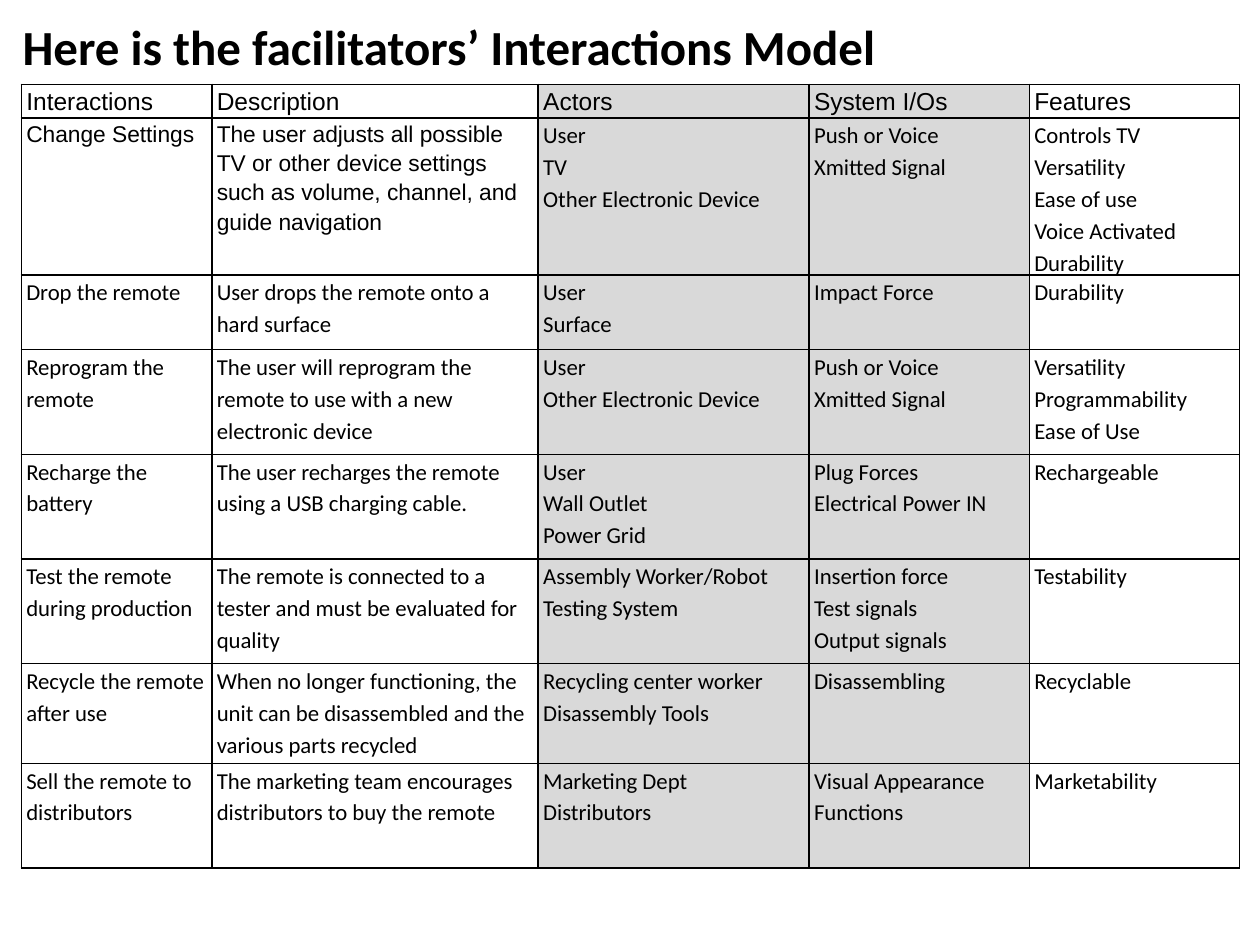
from dataclasses import dataclass

from lxml.etree import SubElement
from pptx import Presentation
from pptx.dml.color import RGBColor
from pptx.enum.text import MSO_ANCHOR, MSO_AUTO_SIZE, PP_ALIGN
from pptx.oxml.ns import qn
from pptx.util import Cm, Pt

BLACK = "000000"
GREY = "D9D9D9"
WIDTHS = [3.84, 6.58, 5.46, 4.44, 4.24]
SHADED = (2, 3)


@dataclass
class Row:
    height: float
    cells: list[str]
    size: float = 13
    plain: int = 0


ROWS = [
    Row(0.64, ["Interactions", "Description", "Actors", "System I/Os", "Features"], 14, 5),
    Row(3.15, [
        "Change Settings",
        "The user adjusts all possible TV or other device settings such as volume, channel, and guide navigation",
        "User\nTV\nOther Electronic Device",
        "Push or Voice\nXmitted Signal",
        "Controls TV\nVersatility\nEase of use\nVoice Activated\nDurability",
    ], plain=2),
    Row(1.5, [
        "Drop the remote",
        "User drops the remote onto a hard surface",
        "User\nSurface",
        "Impact Force",
        "Durability",
    ]),
    Row(2.11, [
        "Reprogram the remote",
        "The user will reprogram the remote to use with a new electronic device",
        "User\nOther Electronic Device",
        "Push or Voice\nXmitted Signal",
        "Versatility\nProgrammability\nEase of Use",
    ]),
    Row(2.11, [
        "Recharge the battery",
        "The user recharges the remote using a USB charging cable.",
        "User\nWall Outlet\nPower Grid",
        "Plug Forces\nElectrical Power IN",
        "Rechargeable",
    ]),
    Row(2.11, [
        "Test the remote during production",
        "The remote is connected to a tester and must be evaluated for quality",
        "Assembly Worker/Robot\nTesting System",
        "Insertion force\nTest signals\nOutput signals",
        "Testability",
    ]),
    Row(2.01, [
        "Recycle the remote after use",
        "When no longer functioning, the unit can be disassembled and the various parts recycled",
        "Recycling center worker\nDisassembly Tools",
        "Disassembling",
        "Recyclable",
    ]),
    Row(2.11, [
        "Sell the remote to distributors",
        "The marketing team encourages distributors to buy the remote",
        "Marketing Dept\nDistributors",
        "Visual Appearance\nFunctions",
        "Marketability",
    ]),
]


def paint(target, shade: str) -> None:
    target.rgb = RGBColor.from_string(shade)


def write(frame, text: str, *, size: float, font: str = "Calibri", bold: bool = False,
          shade: str = BLACK, leading: float = 1.0, after: float = 0) -> None:
    frame.text = text
    for para in frame.paragraphs:
        para.alignment = PP_ALIGN.LEFT
        para.line_spacing = leading
        para.space_before = Pt(0)
        para.space_after = Pt(after)
        for run in para.runs:
            run.font.size = Pt(size)
            run.font.name = font
            run.font.bold = bold
            paint(run.font.color, shade)


def border(cell, shade: str = BLACK, width: float = 1) -> None:
    props = cell._tc.get_or_add_tcPr()
    for side in ("lnL", "lnR", "lnT", "lnB"):
        line = SubElement(props, qn(f"a:{side}"), w=str(Pt(width)))
        fill = SubElement(line, qn("a:solidFill"))
        SubElement(fill, qn("a:srgbClr"), val=shade)


def fill_cell(cell, row: Row, col: int) -> None:
    cell.margin_left = cell.margin_right = Cm(0.1)
    cell.margin_top = cell.margin_bottom = Cm(0)
    cell.vertical_anchor = MSO_ANCHOR.TOP
    border(cell)
    if col in SHADED:
        cell.fill.solid()
        paint(cell.fill.fore_color, GREY)
    else:
        cell.fill.background()
    write(cell.text_frame, row.cells[col], size=row.size, leading=1.15,
          font="Arial" if col < row.plain else "Calibri",
          after=6 if col < 2 or row.plain == len(WIDTHS) else 0)


def add_title(slide, text: str) -> None:
    title = slide.shapes.title
    title.left, title.top, title.width, title.height = Cm(0.2), Cm(0.2), Cm(24.94), Cm(1.45)
    frame = title.text_frame
    frame.word_wrap = True
    frame.auto_size = MSO_AUTO_SIZE.SHAPE_TO_FIT_TEXT
    frame.vertical_anchor = MSO_ANCHOR.MIDDLE
    write(frame, text, size=28, bold=True)


def add_grid(slide, rows: list[Row]) -> None:
    frame = slide.shapes.add_table(len(rows), len(WIDTHS), Cm(0.43), Cm(1.7),
                                   Cm(sum(WIDTHS)), Cm(sum(row.height for row in rows)))
    table = frame.table
    table.first_row = table.horz_banding = False
    for col, width in zip(table.columns, WIDTHS):
        col.width = Cm(width)
    for index, row in enumerate(rows):
        table.rows[index].height = Cm(row.height)
        for col in range(len(WIDTHS)):
            fill_cell(table.cell(index, col), row, col)


def main() -> None:
    deck = Presentation()
    deck.slide_width, deck.slide_height = Cm(25.4), Cm(19.05)
    slide = deck.slides.add_slide(deck.slide_layouts[5])
    add_title(slide, "Here is the facilitators’ Interactions Model")
    add_grid(slide, ROWS)
    deck.save("out.pptx")


if __name__ == "__main__":
    main()
